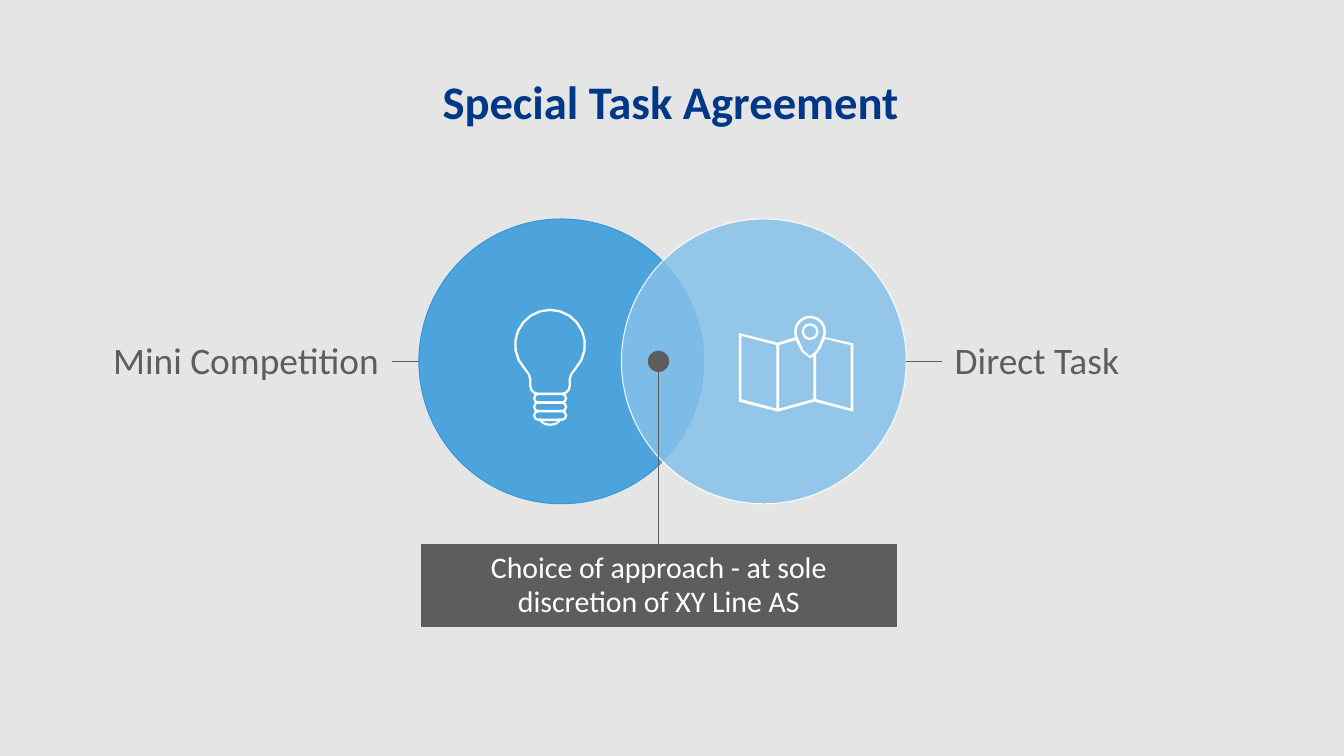
"""Build the Special Task Agreement slide: two overlapping approaches and a callout."""
import math

import pptx
import pptx.dml.color
import pptx.enum.shapes
import pptx.enum.text
import pptx.oxml.ns
import pptx.util

Pt = pptx.util.Pt
SHAPE = pptx.enum.shapes.MSO_SHAPE
ALIGN = pptx.enum.text.PP_ALIGN
ANCHOR = pptx.enum.text.MSO_ANCHOR
AUTO = pptx.enum.text.MSO_AUTO_SIZE

COLORS = {
    "ground": "E5E5E5", "navy": "003787", "blue": "3398DB",
    "sky": "85C1E9", "gray": "5D5D5D", "white": "FFFFFF",
}

HEADING = ("Special Task Agreement", (67.2, 38.9, 583.9, 41.8),
           {"size": Pt(25), "bold": True}, "navy",
           {"alignment": ALIGN.CENTER, "line_spacing": 0.9}, ANCHOR.TOP)
LABELS = [
    ("Mini Competition", (30.2, 178.6, 180, 30.2), {"size": Pt(20)}, "gray",
     {"alignment": ALIGN.RIGHT, "line_spacing": 0.95}, ANCHOR.MIDDLE),
    ("Direct Task", (504.4, 178.6, 180, 30.2), {"size": Pt(20)}, "gray",
     {"alignment": ALIGN.LEFT, "line_spacing": 0.95}, ANCHOR.MIDDLE),
]
CALLOUT = ("Choice of approach - at sole discretion of XY Line AS",
           (225.7, 291.7, 254.6, 43.9), {"size": Pt(16)}, "white",
           {"alignment": ALIGN.CENTER, "line_spacing": 0.95}, ANCHOR.MIDDLE)

DIAMETER, AXIS = 152.6, 193.6
APPROACHES = [(224.4, "blue", "blue"), (332.9, "sky", "white")]
DOT_X, DOT_SIZE = 352.8, 11.4
CALLOUT_LEADER = (DOT_X, AXIS + DOT_SIZE / 2, DOT_X, 291.6)
LABEL_LEADERS = [(210.2, AXIS, 224.4, AXIS), (504.7, AXIS, 485.5, AXIS)]
BULB_X, BULB_Y = 294.7, 184.7
PIN_X, PIN_Y = 434, 177.7
STROKE = 1.25


def color(name):
    return pptx.dml.color.RGBColor.from_string(COLORS[name])


def arc(x, y, rx, ry, start, end, steps):
    angles = [math.radians(start + (end - start) * i / steps) for i in range(steps + 1)]
    return [(x + rx * math.cos(a), y + ry * math.sin(a)) for a in angles]


def bulb(inset):
    radius, neck, corner = 19.3 - inset, 11.2 - inset, 5 - inset
    return (arc(BULB_X, BULB_Y, radius, radius, 137, 403, 16)
            + [(BULB_X + neck + 0.8, 200.5), (BULB_X + neck, 203)]
            + arc(BULB_X + 6.2, 206.7, corner, corner, 0, 90, 3)
            + arc(BULB_X - 6.2, 206.7, corner, corner, 90, 180, 3)
            + [(BULB_X - neck, 203), (BULB_X - neck - 0.8, 200.5)])


def thread(top, inset):
    radius = 3 - inset
    return (arc(BULB_X + 6.2, top + 3, radius, radius, -90, 90, 4)
            + arc(BULB_X - 6.2, top + 3, radius, radius, 90, 270, 4))


def pin_ring(radius):
    return arc(PIN_X, PIN_Y, radius, radius, 0, 330, 11)


CAP = (arc(BULB_X, 224.2, 6, 4, 0, 180, 6)
       + arc(BULB_X, 224.2, 4.8, 2.8, 180, 0, 6))
BULB_ICON = [[thread(top, 0), thread(top, STROKE)] for top in (215, 219.6)] + [
    [CAP], [bulb(0), bulb(STROKE)], [thread(210.4, 0), thread(210.4, STROKE)]]

MAP_EDGE = (arc(PIN_X, PIN_Y, 8.6, 8.6, 20, -200, 11)
            + [(416.7, 183.6), (395.8, 178.4), (395.8, 215.2), (416.7, 220.5),
               (436.3, 215.2), (457.2, 220.5), (457.2, 184)])
PIN_DROP = (arc(PIN_X, PIN_Y, 7.2, 7.2, 20, -200, 11)
            + [(430.4, 187.6), (PIN_X, 190.8), (437.6, 187.6)])
MAP_PANELS = [
    [(397.2, 180), (416, 184.9), (416, 218.9), (397.2, 213.8)],
    [(417.4, 184.9), (426.2, 182.3), (429.6, 188.6), (434, 191.9), (435.8, 191),
     (435.8, 213.8), (417.4, 218.9)],
    [(437.2, 213.8), (437.2, 190), (440, 186), (442, 181.5), (455.8, 185), (455.8, 218.9)],
]
MAP_ICON = [[MAP_EDGE, PIN_DROP] + MAP_PANELS, [pin_ring(4.5), pin_ring(3.3)]]


def write(shape, text, font_format, ink, paragraph_format, anchor):
    frame = shape.text_frame
    frame.text = text
    for key, value in {"word_wrap": True, "auto_size": AUTO.NONE,
                       "vertical_anchor": anchor}.items():
        setattr(frame, key, value)
    paragraph = frame.paragraphs[0]
    for key, value in paragraph_format.items():
        setattr(paragraph, key, value)
    font = paragraph.runs[0].font
    for key, value in {"name": "Calibri", **font_format}.items():
        setattr(font, key, value)
    font.color.rgb = color(ink)


def paint(shape, fill, line=None, width=0.5):
    shape.shadow.inherit = False
    shape.fill.solid()
    shape.fill.fore_color.rgb = color(fill)
    if line:
        shape.line.color.rgb = color(line)
        shape.line.width = Pt(width)
    else:
        shape.line.fill.background()


def draw_icon(slide, parts):
    group = slide.shapes.add_group_shape()
    for contours in parts:
        builder = None
        for contour in contours:
            points = [(Pt(x), Pt(y)) for x, y in contour]
            if builder is None:
                builder = group.shapes.build_freeform(*points[0])
            else:
                builder.move_to(*points[0])
            builder.add_line_segments(points[1:], close=True)
        paint(builder.convert_to_shape(), "white")


def draw_leader(slide, ends):
    leader = slide.shapes.add_connector(
        pptx.enum.shapes.MSO_CONNECTOR.STRAIGHT, *map(Pt, ends))
    leader.line.color.rgb = color("gray")
    leader.line.width = Pt(0.5)
    properties = leader._element.spPr
    properties.append(properties.makeelement(pptx.oxml.ns.qn("a:effectLst"), {}))


def main():
    deck = pptx.Presentation()
    deck.slide_width, deck.slide_height = Pt(720), Pt(405)
    slide = deck.slides.add_slide(deck.slide_layouts[5])
    slide.background.fill.solid()
    slide.background.fill.fore_color.rgb = color("ground")

    text, box, *formats = HEADING
    heading = slide.shapes.title
    for side, value in zip(("left", "top", "width", "height"), box):
        setattr(heading, side, Pt(value))
    write(heading, text, *formats)

    for left, fill, line in APPROACHES:
        approach = slide.shapes.add_shape(
            SHAPE.OVAL, *map(Pt, (left, AXIS - DIAMETER / 2, DIAMETER, DIAMETER)))
        paint(approach, fill, line)
        tint = approach._element.spPr.find(pptx.oxml.ns.qn("a:solidFill"))[0]
        tint.append(tint.makeelement(pptx.oxml.ns.qn("a:alpha"), {"val": "85000"}))

    for text, box, *formats in LABELS:
        write(slide.shapes.add_textbox(*map(Pt, box)), text, *formats)

    text, box, *formats = CALLOUT
    callout = slide.shapes.add_shape(SHAPE.RECTANGLE, *map(Pt, box))
    paint(callout, "gray", "gray", 0.75)
    write(callout, text, *formats)

    dot = slide.shapes.add_shape(SHAPE.OVAL, *map(Pt, (
        DOT_X - DOT_SIZE / 2, AXIS - DOT_SIZE / 2, DOT_SIZE, DOT_SIZE)))
    paint(dot, "gray")
    draw_leader(slide, CALLOUT_LEADER)
    for icon in (MAP_ICON, BULB_ICON):
        draw_icon(slide, icon)
    for ends in LABEL_LEADERS:
        draw_leader(slide, ends)
    deck.save("out.pptx")


if __name__ == "__main__":
    main()
